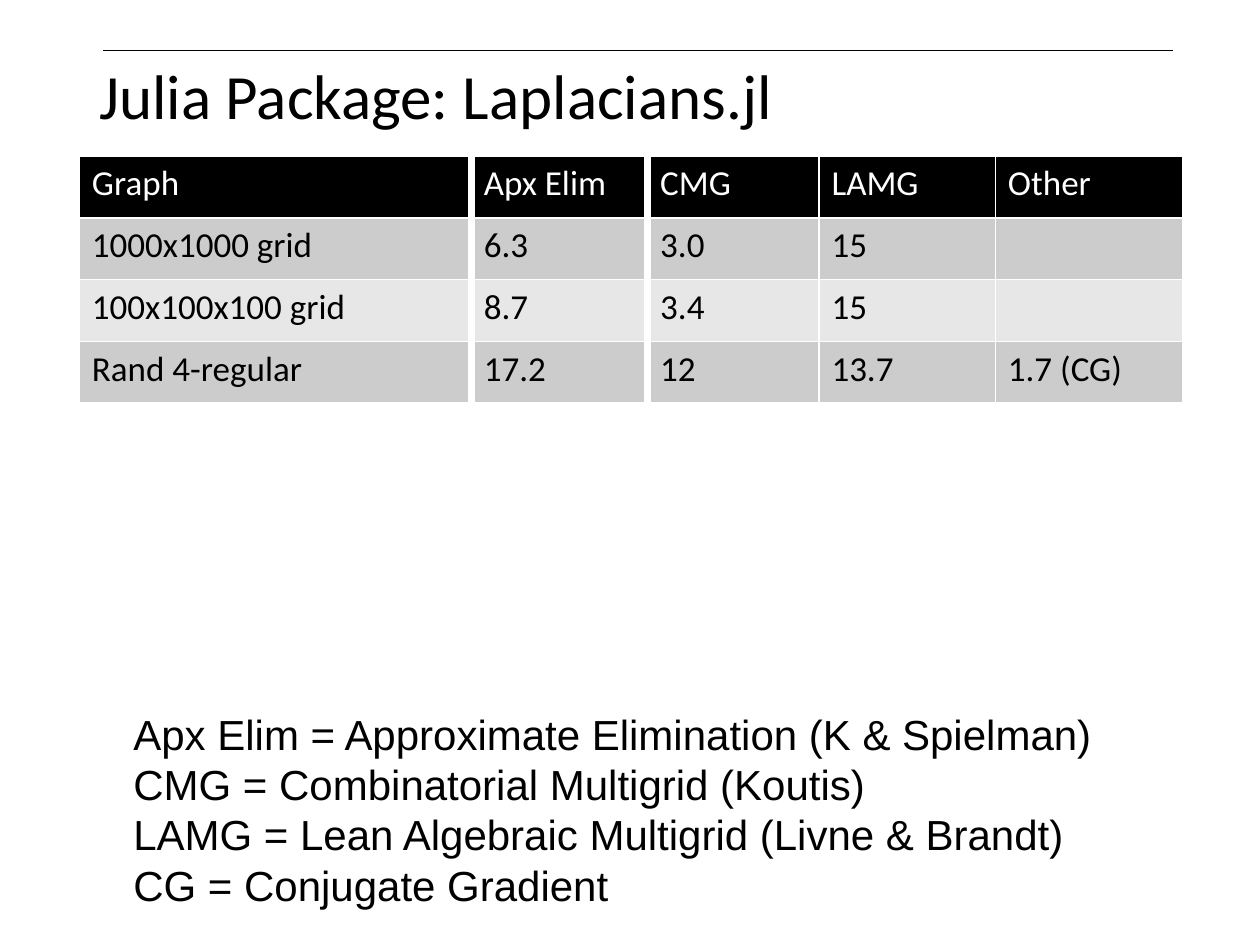
from pptx import Presentation
from pptx.dml.color import RGBColor
from pptx.enum.shapes import MSO_CONNECTOR
from pptx.enum.text import MSO_ANCHOR, MSO_AUTO_SIZE
from pptx.oxml.ns import qn
from pptx.util import Inches, Pt
from lxml.etree import SubElement

COLORS = {
    "ink": "000000",
    "paper": "FFFFFF",
    "band_dark": "CCCCCC",
    "band_light": "E7E7E7",
}
GRID_COLUMNS, GRID_ROWS = 100, 75
THIN, THICK = 1, 4.5

RESULTS = [
    ["Graph", "Apx Elim", "CMG", "LAMG", "Other"],
    ["1000x1000 grid", "6.3", "3.0", "15", ""],
    ["100x100x100 grid", "8.7", "3.4", "15", ""],
    ["Rand 4-regular", "17.2", "12", "13.7", "1.7 (CG)"],
]
RESULT_WIDTHS = [31.1, 14, 13.6, 14, 14.9]
HIGHLIGHTED_COLUMN = 1

ABBREVIATIONS = [
    "Apx Elim = Approximate Elimination (K & Spielman)",
    "CMG = Combinatorial Multigrid (Koutis)",
    "LAMG = Lean Algebraic Multigrid (Livne & Brandt)",
    "CG = Conjugate Gradient",
]


class SlideBuilder:
    """Places elements on one slide, measured in grid columns and rows."""

    def __init__(self, presentation):
        self.column = presentation.slide_width / GRID_COLUMNS
        self.row = presentation.slide_height / GRID_ROWS
        self.slide = presentation.slides.add_slide(presentation.slide_layouts[6])

    def box(self, left, top, width, height):
        return (round(left * self.column), round(top * self.row),
                round(width * self.column), round(height * self.row))

    def color(self, name):
        return RGBColor.from_string(COLORS[name])

    def style(self, paragraph, font, size, color="ink"):
        for run in paragraph.runs:
            run.font.name = font
            run.font.size = Pt(size)
            run.font.bold = False
            run.font.color.rgb = self.color(color)

    def rule(self, left, right, top):
        x, y, length, _ = self.box(left, top, right - left, 0)
        line = self.slide.shapes.add_connector(
            MSO_CONNECTOR.STRAIGHT, x, y, x + length, y)
        line.line.color.rgb = self.color("ink")
        line.line.width = Pt(1)
        SubElement(line._element.spPr, qn("a:effectLst"))

    def text(self, lines, place, font, size, anchor=MSO_ANCHOR.TOP,
             wrap=True, spacing=1.0):
        text_frame = self.slide.shapes.add_textbox(*self.box(*place)).text_frame
        text_frame.text = "\n".join(lines)
        text_frame.word_wrap = wrap
        text_frame.auto_size = (MSO_AUTO_SIZE.NONE if wrap
                                else MSO_AUTO_SIZE.SHAPE_TO_FIT_TEXT)
        text_frame.vertical_anchor = anchor
        for paragraph in text_frame.paragraphs:
            paragraph.line_spacing = spacing
            self.style(paragraph, font, size)

    def border(self, cell, side, width):
        line = SubElement(cell._tc.get_or_add_tcPr(), qn(f"a:ln{side}"),
                          w=str(Pt(width)))
        fill = SubElement(line, qn("a:solidFill"))
        SubElement(fill, qn("a:srgbClr"), val=COLORS["paper"])

    def table(self, rows, left, top, widths, row_height, highlighted):
        place = self.box(left, top, sum(widths), row_height * len(rows))
        table = self.slide.shapes.add_table(len(rows), len(widths), *place).table
        table.horz_banding = False
        for column, width in zip(table.columns, widths):
            column.width = round(width * self.column)
        for row_index, values in enumerate(rows):
            table.rows[row_index].height = round(row_height * self.row)
            header = row_index == 0
            band = "band_dark" if row_index % 2 else "band_light"
            for column_index, value in enumerate(values):
                cell = table.cell(row_index, column_index)
                cell.text = value
                self.style(cell.text_frame.paragraphs[0], "Calibri", 20,
                           "paper" if header else "ink")
                # Both edges of the highlighted column are thick.
                left_edge = column_index in (highlighted, highlighted + 1)
                right_edge = column_index in (highlighted - 1, highlighted)
                self.border(cell, "L", THICK if left_edge else THIN)
                self.border(cell, "R", THICK if right_edge else THIN)
                self.border(cell, "T", THIN)
                self.border(cell, "B", THIN)
                cell.fill.solid()
                cell.fill.fore_color.rgb = self.color("ink" if header else band)


def main():
    presentation = Presentation()
    presentation.slide_width = Inches(10)
    presentation.slide_height = Inches(7.5)
    builder = SlideBuilder(presentation)
    builder.rule(8.2, 93.1, 4)
    builder.text(["Julia Package: Laplacians.jl"], (6.9, 0.6, 86.2, 14.5),
                 "Calibri", 36, anchor=MSO_ANCHOR.MIDDLE, spacing=0.9)
    builder.table(RESULTS, 6.3, 12.4, RESULT_WIDTHS, 4.9, HIGHLIGHTED_COLUMN)
    builder.text(ABBREVIATIONS, (9.6, 55.7, 78.9, 17.2), "Arial", 24, wrap=False)
    presentation.save("out.pptx")


if __name__ == "__main__":
    main()
